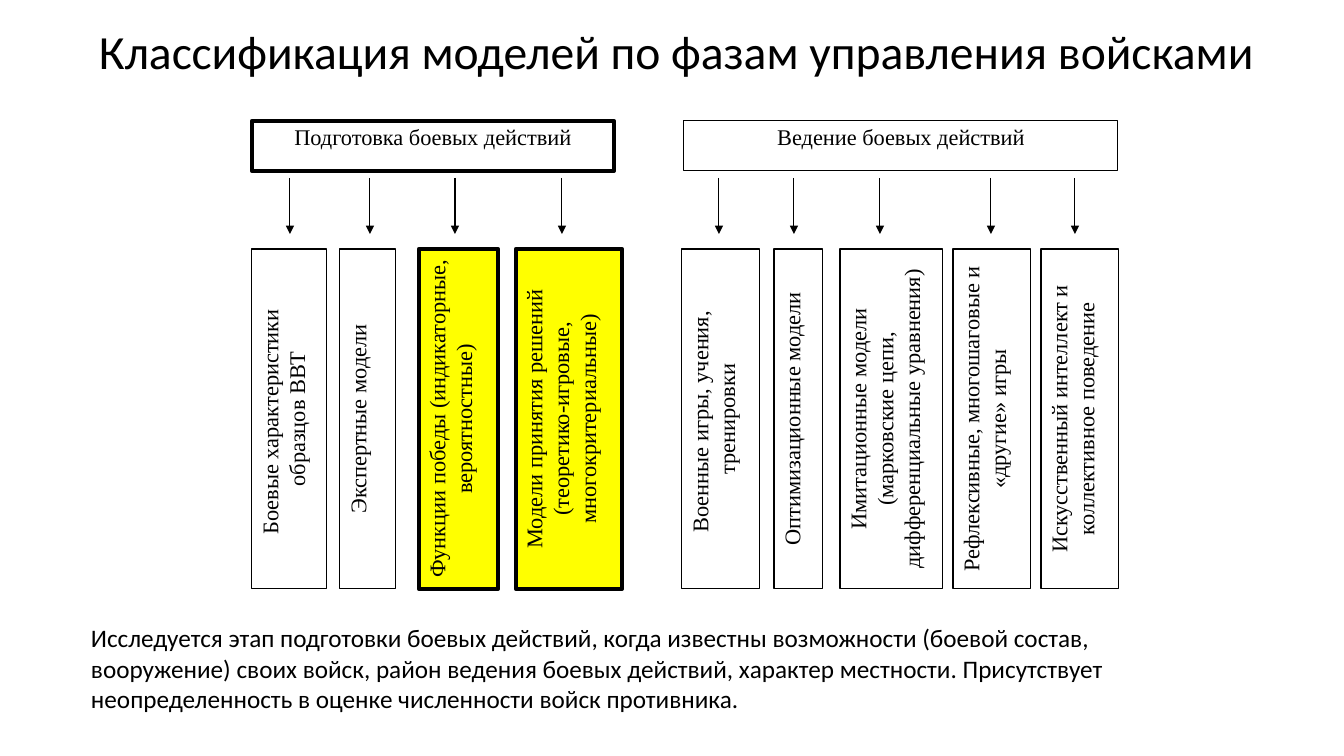
from lxml.etree import SubElement
from pptx import Presentation
from pptx.dml.color import RGBColor
from pptx.enum.shapes import MSO_CONNECTOR as Connector, MSO_SHAPE as Shape
from pptx.enum.text import MSO_ANCHOR as Anchor, PP_ALIGN as Align
from pptx.oxml.ns import qn
from pptx.util import Pt

PX = 914400 / 100.8
BLACK = RGBColor(0x00, 0x00, 0x00)
WHITE = RGBColor(0xFF, 0xFF, 0xFF)
YELLOW = RGBColor(0xFF, 0xFF, 0x00)

HEADER_TOP, HEADER_HEIGHT = 121, 50
ARROW_TOP, ARROW_BOTTOM = 178, 234
MODEL_TOP, MODEL_HEIGHT = 249, 340


def px(*lengths):
    """Turn pixel lengths into EMU."""
    return [round(length * PX) for length in lengths]


def write(box, text, font, size, inset_x, inset_y):
    """Put one wrapped paragraph into a box and return it."""
    frame = box.text_frame
    frame.word_wrap = True
    frame.margin_left = frame.margin_right = px(inset_x)[0]
    frame.margin_top = frame.margin_bottom = px(inset_y)[0]
    para = frame.paragraphs[0]
    para.text = text
    for span in para.runs:
        span.font.name = font
        span.font.size = Pt(size)
        span.font.color.rgb = BLACK
    return para


deck = Presentation()
deck.slide_width, deck.slide_height = px(1344, 756)
page = deck.slides.add_slide(deck.slide_layouts[6])

title = page.shapes.add_textbox(*px(89, 14, 1205, 81))
title.text_frame.vertical_anchor = Anchor.MIDDLE
heading = write(title, "Классификация моделей по фазам управления войсками",
                "Calibri", 34, 10, 5)
heading.line_spacing = 0.9

summary = page.shapes.add_textbox(*px(89, 617, 1106, 102))
summary.text_frame.vertical_anchor = Anchor.MIDDLE
write(summary,
      "Исследуется этап подготовки боевых действий, когда известны возможности "
      "(боевой состав, вооружение) своих войск, район ведения боевых действий, "
      "характер местности. Присутствует неопределенность в оценке численности "
      "войск противника.", "Calibri", 18, 2, 5)

# left, width, text, fill, line width
headers = [
    (252, 362, "Подготовка боевых действий", WHITE, 3),
    (684, 434, "Ведение боевых действий", WHITE, 0.75),
]
models = [
    (252, 75, "Боевые характеристики \nобразцов ВВТ", WHITE, 0.75),
    (340, 56, "Экспертные модели", WHITE, 0.75),
    (419, 79, "Функции победы (индикаторные, вероятностные)", YELLOW, 3),
    (516, 106, "Модели принятия решений (теоретико-игровые, "
               "многокритериальные)", YELLOW, 3),
    (682, 78, "Военные игры, учения, \nтренировки", WHITE, 0.75),
    (774, 49, "Оптимизационные модели", WHITE, 0.75),
    (840, 103, "Имитационные модели (марковские цепи, "
               "дифференциальные уравнения)", WHITE, 0.75),
    (953, 78, "Рефлексивные, многошаговые и «другие» игры", WHITE, 0.75),
    (1041, 78, "Искусственный интеллект и коллективное поведение", WHITE, 0.75),
]
rows = [
    (headers, HEADER_TOP, HEADER_HEIGHT, False),
    (models, MODEL_TOP, MODEL_HEIGHT, True),
]
for boxes, top, height, upright in rows:
    for left, width, text, fill, line_width in boxes:
        box = page.shapes.add_shape(Shape.RECTANGLE, *px(left, top, width, height))
        box.shadow.inherit = False
        box.fill.solid()
        box.fill.fore_color.rgb = fill
        box.line.color.rgb = BLACK
        box.line.width = Pt(line_width)
        box.text_frame.vertical_anchor = Anchor.TOP
        write(box, text, "Times New Roman", 16, 4, 2).alignment = Align.CENTER
        if upright:
            box.text_frame._txBody.bodyPr.set("vert", "vert270")

for x in (290, 370, 455, 562, 719, 794, 880, 991, 1075):
    arrow = page.shapes.add_connector(
        Connector.STRAIGHT, *px(x, ARROW_TOP, x, ARROW_BOTTOM))
    arrow.line.color.rgb = BLACK
    arrow.line.width = Pt(0.75)
    SubElement(arrow.line._get_or_add_ln(), qn("a:tailEnd"), type="triangle")
    SubElement(arrow._element.spPr, qn("a:effectLst"))

deck.save("out.pptx")
